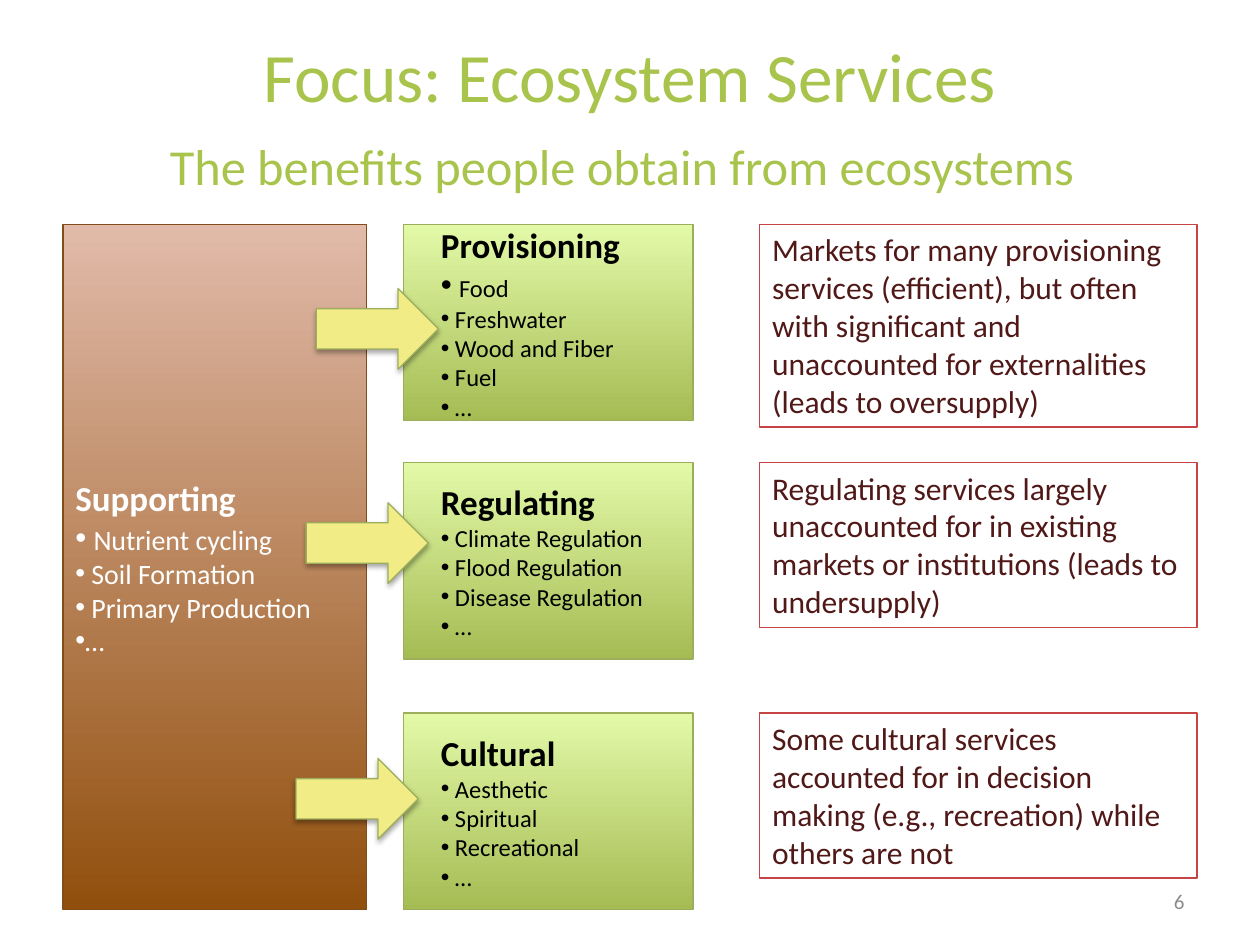
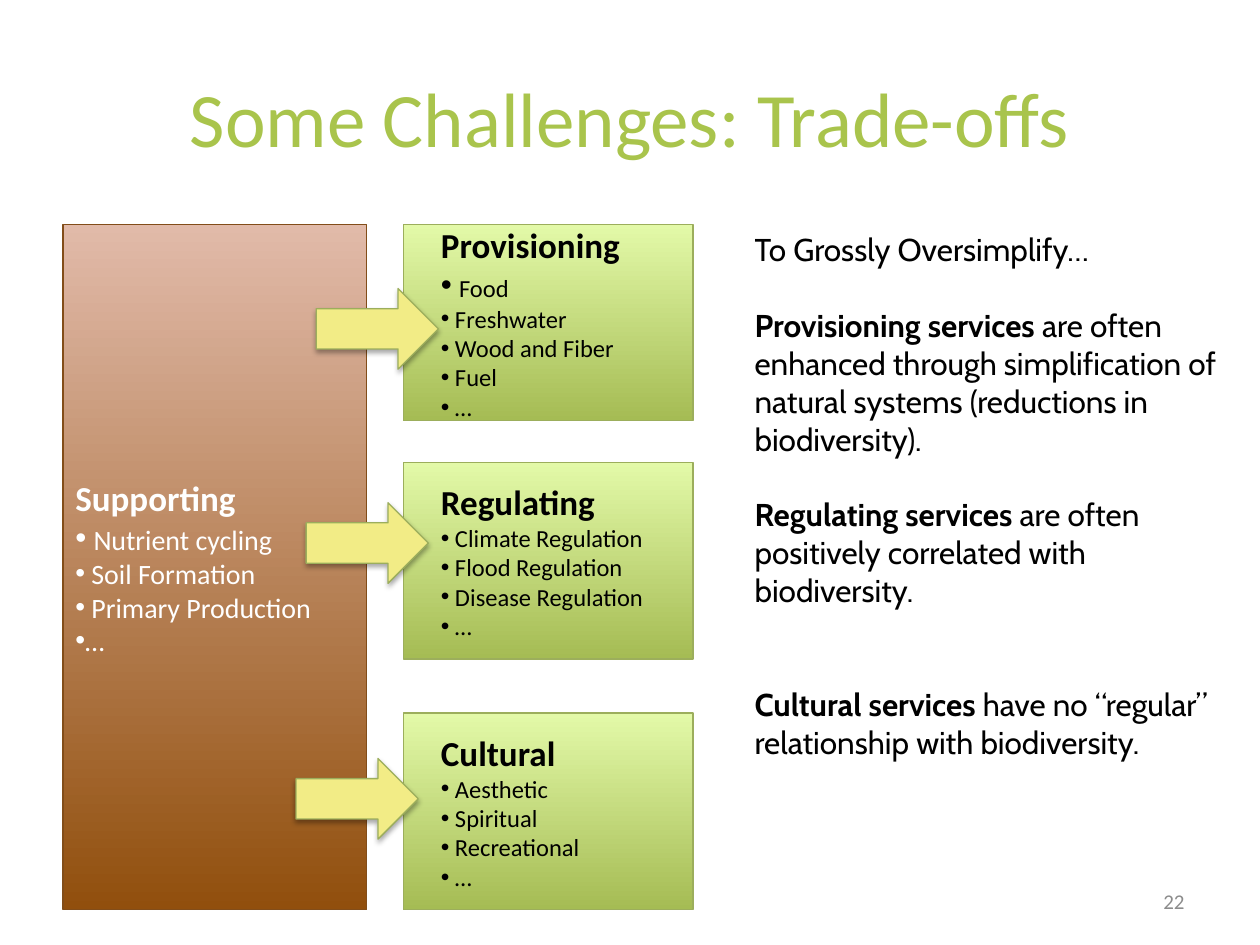
from lxml.etree import SubElement
from pptx import Presentation
from pptx.dml.color import RGBColor
from pptx.enum.shapes import MSO_SHAPE
from pptx.enum.text import MSO_ANCHOR, MSO_AUTO_SIZE, PP_ALIGN
from pptx.oxml.ns import qn
from pptx.util import Inches, Pt

WHITE = RGBColor(0xFF, 0xFF, 0xFF)
BLACK = RGBColor(0x00, 0x00, 0x00)
TITLE_GREEN = RGBColor(0xA9, 0xC4, 0x4C)
BROWN_DARK = RGBColor(0x91, 0x4F, 0x0D)
BROWN_LIGHT = RGBColor(0xE1, 0xBA, 0xA9)
BROWN_LINE = RGBColor(0x82, 0x4D, 0x19)
GREEN_DARK = RGBColor(0xA5, 0xBC, 0x54)
GREEN_LIGHT = RGBColor(0xE3, 0xF9, 0xA8)
GREEN_LINE = RGBColor(0x9C, 0xAE, 0x5C)
ARROW_YELLOW = RGBColor(0xF2, 0xEC, 0x86)
COMMENT_LINE = RGBColor(0xC7, 0x44, 0x44)
COMMENT_TEXT = RGBColor(0x51, 0x18, 0x18)
NUMBER_GRAY = RGBColor(0x8C, 0x8C, 0x8C)

ROW_TOPS = (1.78, 3.67, 5.66)
DIAGRAM_BOX = (0.5, 1.78, 5, 5.44)
SUPPORTING_WIDTH = 2.41
SERVICE_WIDTH, SERVICE_HEIGHT = 2.3, 1.56
ARROW_OFFSETS = ((2.01, 0.51), (1.93, 2.21), (1.85, 4.24))

SUPPORTING_ITEMS = (" Nutrient cycling", " Soil Formation", " Primary Production", "…")
SERVICES = (
    ("Provisioning", (" Food", " Freshwater", " Wood and Fiber", " Fuel", " …"), 18),
    ("Regulating", (" Climate Regulation", " Flood Regulation", " Disease Regulation", " …"), 14),
    ("Cultural", (" Aesthetic", " Spiritual", " Recreational", " …"), 14),
)
COMMENTS = (
    ("Markets for many provisioning services (efficient), but often with "
     "significant and unaccounted for externalities (leads to oversupply)", 1.61),
    ("Regulating services largely unaccounted for in existing markets or "
     "institutions (leads to undersupply)", 1.31),
    ("Some cultural services accounted for in decision making (e.g., recreation) "
     "while others are not", 1.31),
)
TRADE_OFFS = (
    ("", "To Grossly Oversimplify…", 0),
    ("Provisioning services", " are often enhanced through simplification of natural "
     "systems (reductions in biodiversity).", 1),
    ("Regulating services", " are often positively correlated with biodiversity.", 1),
    ("Cultural services", " have no “regular” relationship with biodiversity.", 2),
)
CABIN_LINE = 21.7


def add_text(paragraph, text, size=18, color=BLACK, bold=False, font="Calibri"):
    """Append one formatted run to a paragraph."""
    run = paragraph.add_run()
    run.text = text
    run.font.size = Pt(size)
    run.font.bold = bold
    run.font.name = font
    run.font.color.rgb = color


def next_paragraph(frame, alignment=PP_ALIGN.LEFT):
    """Return the unused first paragraph of a frame, or a new one."""
    first = frame.paragraphs[0]
    paragraph = frame.add_paragraph() if first.runs else first
    paragraph.alignment = alignment
    return paragraph


def add_bullet(paragraph):
    """Give a paragraph a round bullet without indent."""
    properties = paragraph._p.get_or_add_pPr()
    properties.set("marL", "0")
    properties.set("indent", "0")
    SubElement(properties, qn("a:buFont")).set("typeface", "Arial")
    SubElement(properties, qn("a:buChar")).set("char", "•")


def add_box(slide, box, line, kind=MSO_SHAPE.RECTANGLE):
    """Add an outlined preset shape without shadow."""
    shape = slide.shapes.add_shape(kind, *map(Inches, box))
    shape.shadow.inherit = False
    shape.line.color.rgb = line
    shape.line.width = Pt(0.75)
    shape.text_frame.word_wrap = True
    return shape


def add_list_box(slide, box, heading, items, size, lead_size, color, gradient, line, inset=0.1):
    """Add a gradient box with a bold heading and bullets."""
    shape = add_box(slide, box, line)
    shape.fill.gradient()
    shape.fill.gradient_angle = 90
    for stop, stop_color in zip(shape.fill.gradient_stops, gradient):
        stop.color.rgb = stop_color
    frame = shape.text_frame
    frame.vertical_anchor = MSO_ANCHOR.MIDDLE
    frame.margin_left = Inches(inset)
    add_text(next_paragraph(frame), heading, size=20, color=color, bold=True)
    for index, item in enumerate(items):
        paragraph = next_paragraph(frame)
        add_bullet(paragraph)
        if index == 0 and lead_size != size:
            add_text(paragraph, " ", size=lead_size, color=color)
            item = item.strip()
        add_text(paragraph, item, size=size, color=color)


def add_arrow(slide, left, top):
    """Add a yellow arrow with a soft shadow below."""
    arrow = add_box(slide, (left, top, 0.97, 0.64), GREEN_LINE, MSO_SHAPE.RIGHT_ARROW)
    arrow.fill.solid()
    arrow.fill.fore_color.rgb = ARROW_YELLOW
    effects = arrow._element.spPr.find(qn("a:effectLst"))
    shadow = SubElement(effects, qn("a:outerShdw"), blurRad=str(Pt(3.1)),
                        dist=str(Pt(1.8)), dir="5400000", rotWithShape="0")
    shade = SubElement(shadow, qn("a:srgbClr"), val="000000")
    SubElement(shade, qn("a:alpha"), val="35000")


def add_diagram(slide, box):
    """Draw supporting services feeding the three other kinds."""
    left, top, width, height = box
    add_list_box(slide, (left, top, SUPPORTING_WIDTH, height), "Supporting",
                 SUPPORTING_ITEMS, 16, 18, WHITE, (BROWN_DARK, BROWN_LIGHT), BROWN_LINE)
    service_left = left + width - SERVICE_WIDTH
    for row_top, (heading, items, lead_size) in zip(ROW_TOPS, SERVICES):
        add_list_box(slide, (service_left, row_top, SERVICE_WIDTH, SERVICE_HEIGHT),
                     heading, items, 14, lead_size, BLACK,
                     (GREEN_DARK, GREEN_LIGHT), GREEN_LINE, inset=0.3)
    for across, down in ARROW_OFFSETS:
        add_arrow(slide, left + across, top + down)


def add_comments(slide, left, width):
    """Place one outlined comment beside each service row."""
    for top, (text, height) in zip(ROW_TOPS, COMMENTS):
        shape = add_box(slide, (left, top, width, height), COMMENT_LINE)
        shape.fill.background()
        frame = shape.text_frame
        frame.vertical_anchor = MSO_ANCHOR.TOP
        frame.auto_size = MSO_AUTO_SIZE.SHAPE_TO_FIT_TEXT
        add_text(next_paragraph(frame), text, color=COMMENT_TEXT)


def add_text_frame(slide, box):
    """Add a wrapping text box and return its frame."""
    frame = slide.shapes.add_textbox(*map(Inches, box)).text_frame
    frame.word_wrap = True
    return frame


def add_trade_offs(slide, box):
    """Write the trade-off statements with bold openings."""
    frame = add_text_frame(slide, box)
    frame.auto_size = MSO_AUTO_SIZE.SHAPE_TO_FIT_TEXT
    for opening, statement, gap_lines in TRADE_OFFS:
        paragraph = next_paragraph(frame)
        paragraph.space_before = Pt(gap_lines * CABIN_LINE)
        if opening:
            add_text(paragraph, opening, bold=True, font="Cabin")
        add_text(paragraph, statement, font="Cabin")


def add_base_slide(presentation, title_lines, number):
    """Add a slide with title, service diagram and number."""
    slide = presentation.slides.add_slide(presentation.slide_layouts[5])
    title = slide.shapes.title
    title.left, title.top, title.width, title.height = map(Inches, (0.5, 0.3, 9, 1.25))
    frame = title.text_frame
    frame.auto_size = MSO_AUTO_SIZE.NONE
    frame.vertical_anchor = MSO_ANCHOR.MIDDLE
    for runs in title_lines:
        paragraph = next_paragraph(frame, PP_ALIGN.CENTER)
        for text, size in runs:
            add_text(paragraph, text, size=size, color=TITLE_GREEN)
    add_diagram(slide, DIAGRAM_BOX)
    footer = add_text_frame(slide, (7.17, 6.95, 2.33, 0.4))
    footer.vertical_anchor = MSO_ANCHOR.MIDDLE
    add_text(next_paragraph(footer, PP_ALIGN.RIGHT), number, size=12, color=NUMBER_GRAY)
    return slide


def main():
    """Build and save the two slides."""
    presentation = Presentation()
    presentation.slide_width, presentation.slide_height = Inches(10), Inches(7.5)
    services_title = (
        (("Focus: Ecosystem Services", 39.6),),
        (("The benefits people obtain from ecosystems", 28.8), (" ", 39.6)),
    )
    services_slide = add_base_slide(presentation, services_title, "6")
    add_comments(services_slide, 6.03, 3.47)
    trade_offs_title = ((("Some Challenges: Trade-offs", 44),),)
    trade_offs_slide = add_base_slide(presentation, trade_offs_title, "22")
    add_trade_offs(trade_offs_slide, (5.89, 1.78, 4.11, 4.34))
    presentation.save("out.pptx")


if __name__ == "__main__":
    main()
